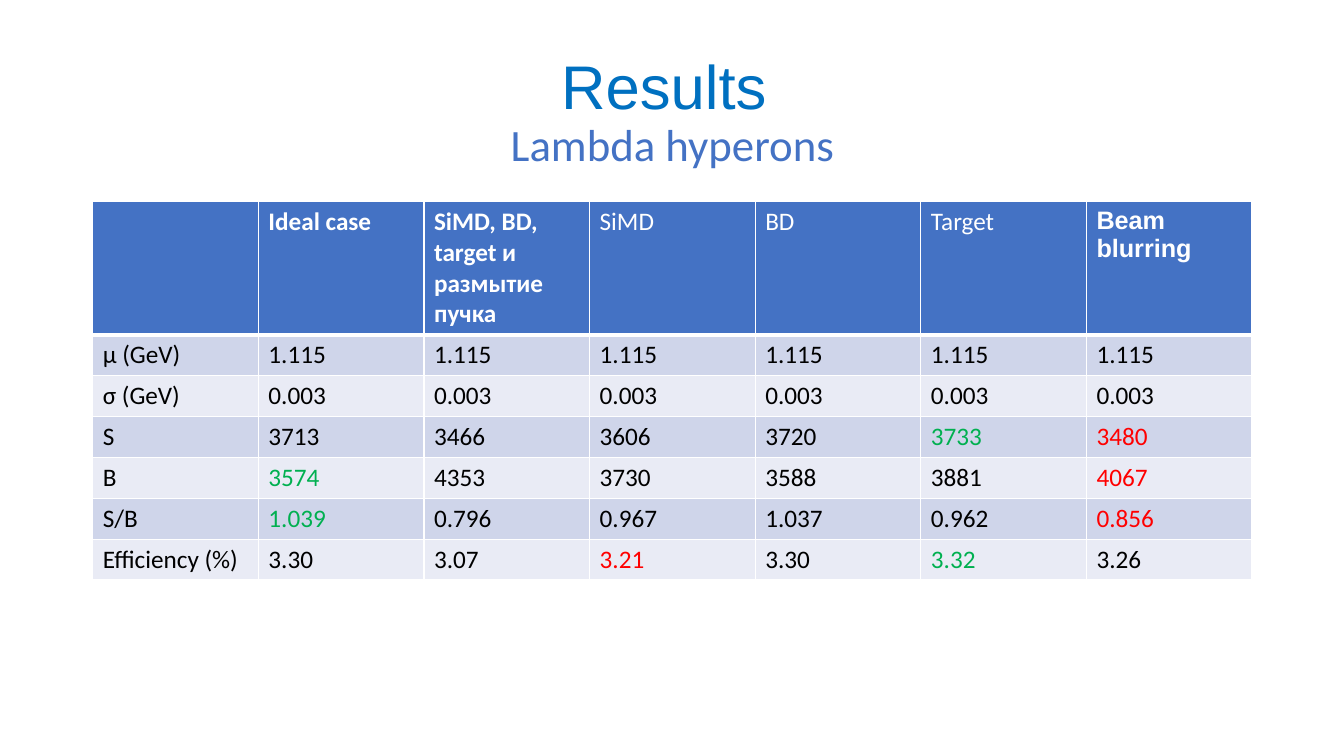
from lxml.etree import SubElement
from pptx import Presentation
from pptx.dml.color import RGBColor
from pptx.enum.text import MSO_ANCHOR, PP_ALIGN
from pptx.oxml.ns import qn
from pptx.util import Inches, Pt

WHITE, BLACK, BLUE = "FFFFFF", "000000", "4472C4"
GREEN, RED = "00B050", "FF0000"
BANDS = ("CFD5EA", "E9EBF5")
HEADER_HEIGHT, ROW_HEIGHT = 1.32, 0.405

HEADINGS = ["", "Ideal case", "SiMD, BD, target и размытие пучка",
            "SiMD", "BD", "Target", "Beam blurring"]
BOLD_HEADINGS = {1, 2, 6}
ARIAL_HEADINGS = {6}
RESULTS = [
    ["µ (GeV)"] + ["1.115"] * 6,
    ["σ (GeV)"] + ["0.003"] * 6,
    ["S", "3713", "3466", "3606", "3720", "3733", "3480"],
    ["B", "3574", "4353", "3730", "3588", "3881", "4067"],
    ["S/B", "1.039", "0.796", "0.967", "1.037", "0.962", "0.856"],
    ["Efficiency (%)", "3.30", "3.07", "3.21", "3.30", "3.32", "3.26"],
]
HIGHLIGHTS = {
    ("S", 5): GREEN, ("S", 6): RED,
    ("B", 1): GREEN, ("B", 6): RED,
    ("S/B", 1): GREEN, ("S/B", 6): RED,
    ("Efficiency (%)", 3): RED, ("Efficiency (%)", 5): GREEN,
}


def color(value):
    return RGBColor.from_string(value)


def set_font(font, name, size, value, bold=False):
    font.name, font.size, font.bold = name, Pt(size), bold
    font.color.rgb = color(value)


def add_title(page, left, top, width, height):
    box = page.shapes.title
    box.left, box.top = Inches(left), Inches(top)
    box.width, box.height = Inches(width), Inches(height)
    box.text_frame.vertical_anchor = MSO_ANCHOR.MIDDLE
    para = box.text_frame.paragraphs[0]
    para.alignment, para.line_spacing = PP_ALIGN.CENTER, 0.9
    span = para.add_run()
    span.text = "Results "
    set_font(span.font, "Arial", 44, "0070C0")
    para.add_line_break()
    span = para.add_run()
    span.text = "Lambda hyperons"
    set_font(span.font, "Calibri", 32, BLUE)


def set_borders(cell, bottom_width):
    properties = cell._tc.get_or_add_tcPr()
    for side, width in (("L", 1), ("R", 1), ("T", 1), ("B", bottom_width)):
        line = SubElement(properties, qn(f"a:ln{side}"), w=str(Pt(width)))
        fill = SubElement(line, qn("a:solidFill"))
        SubElement(fill, qn("a:srgbClr"), val=WHITE)


def fill_cell(cell, text, background, value, name="Calibri", bold=False, bottom_width=1):
    set_borders(cell, bottom_width)
    cell.fill.solid()
    cell.fill.fore_color.rgb = color(background)
    cell.text = text
    set_font(cell.text_frame.paragraphs[0].font, name, 18, value, bold)


def add_results(page, left, top, width):
    height = HEADER_HEIGHT + ROW_HEIGHT * len(RESULTS)
    table = page.shapes.add_table(
        len(RESULTS) + 1, len(HEADINGS),
        Inches(left), Inches(top), Inches(width), Inches(height)).table
    for column in table.columns:
        column.width = Inches(width / len(HEADINGS))
    for index, row in enumerate(table.rows):
        row.height = Inches(ROW_HEIGHT if index else HEADER_HEIGHT)
    for column, heading in enumerate(HEADINGS):
        name = "Arial" if column in ARIAL_HEADINGS else "Calibri"
        fill_cell(table.cell(0, column), heading, BLUE, WHITE, name,
                  column in BOLD_HEADINGS, bottom_width=3)
    for index, values in enumerate(RESULTS):
        for column, text in enumerate(values):
            value = HIGHLIGHTS.get((values[0], column), BLACK)
            fill_cell(table.cell(index + 1, column), text, BANDS[index % 2], value)


def main():
    deck = Presentation()
    deck.slide_width, deck.slide_height = Inches(13.33), Inches(7.5)
    page = deck.slides.add_slide(deck.slide_layouts[5])
    add_title(page, 0.92, 0.4, 11.5, 1.45)
    add_results(page, 0.92, 2, 11.5)
    deck.save("out.pptx")


if __name__ == "__main__":
    main()
